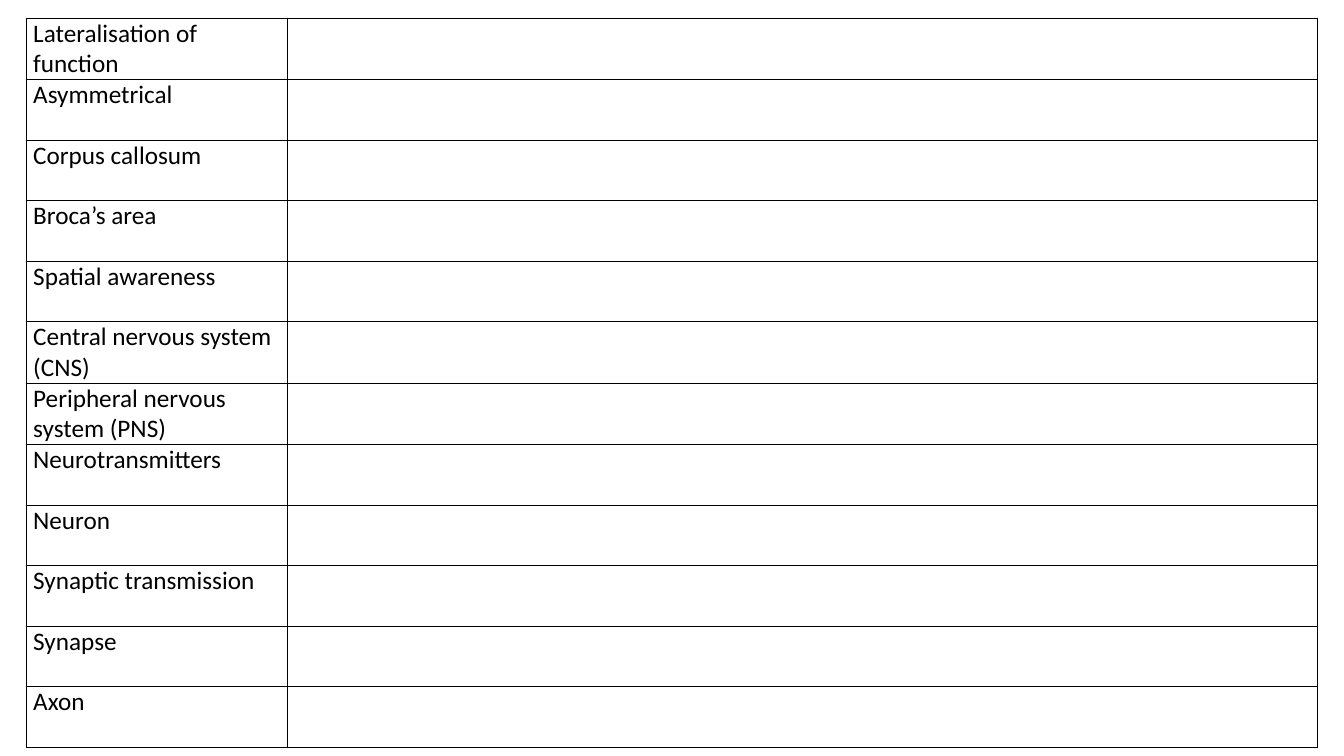
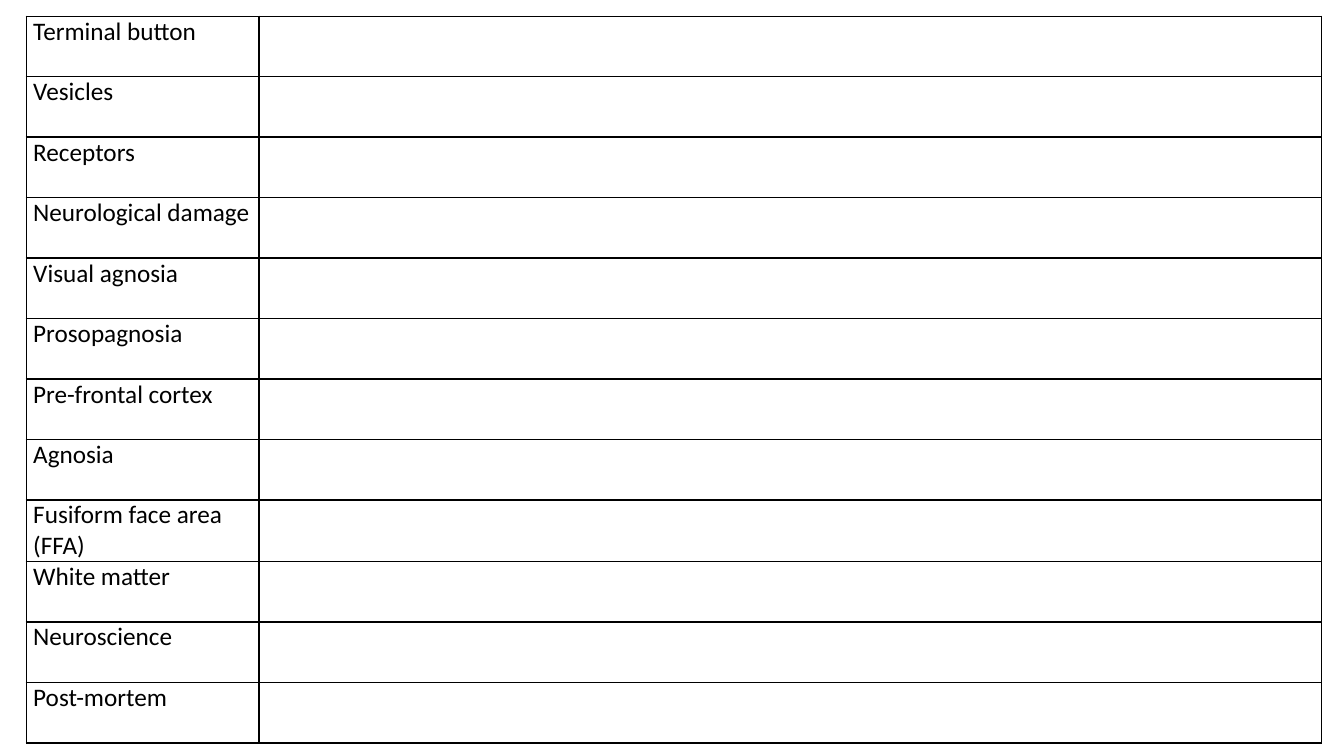
"""Build two glossary slides, each a table of terms with space for definitions."""
from collections import namedtuple

from lxml.etree import SubElement
from pptx import Presentation
from pptx.dml.color import RGBColor
from pptx.oxml.ns import qn
from pptx.util import Inches, Pt

Theme = namedtuple("Theme", "ink font size line pad row")
theme = Theme(ink="000000", font="Calibri", size=18, line=1, pad=0.07, row=0.6)

Sheet = namedtuple("Sheet", "left top widths terms")
sheets = [
    Sheet(0.26, 0.18, (2.59, 10.22), [
        "Lateralisation of function",
        "Asymmetrical",
        "Corpus callosum",
        "Broca’s area",
        "Spatial awareness",
        "Central nervous system (CNS)",
        "Peripheral nervous system (PNS)",
        "Neurotransmitters",
        "Neuron",
        "Synaptic transmission",
        "Synapse",
        "Axon",
    ]),
    Sheet(0.26, 0.16, (2.31, 10.54), [
        "Terminal button",
        "Vesicles",
        "Receptors",
        "Neurological damage",
        "Visual agnosia",
        "Prosopagnosia",
        "Pre-frontal cortex",
        "Agnosia",
        "Fusiform face area (FFA)",
        "White matter",
        "Neuroscience",
        "Post-mortem",
    ]),
]


def write(cell, text, size=theme.size, font=theme.font, color=theme.ink):
    run = cell.text_frame.paragraphs[0].add_run()
    run.text = text
    run.font.size = Pt(size)
    run.font.name = font
    run.font.color.rgb = RGBColor.from_string(color)


def frame(cell):
    props = cell._tc.get_or_add_tcPr()
    for side in ("lnL", "lnR", "lnT", "lnB"):
        edge = SubElement(props, qn(f"a:{side}"), w=str(Pt(theme.line)))
        fill = SubElement(edge, qn("a:solidFill"))
        SubElement(fill, qn("a:srgbClr"), val=theme.ink)
    cell.fill.background()
    cell.margin_left = cell.margin_right = Inches(theme.pad)
    cell.margin_top = cell.margin_bottom = 0


deck = Presentation()
deck.slide_width = Inches(13.33)
deck.slide_height = Inches(7.5)
blank = deck.slide_layouts[6]

for sheet in sheets:
    slide = deck.slides.add_slide(blank)
    count = len(sheet.terms)
    table = slide.shapes.add_table(
        count, len(sheet.widths), Inches(sheet.left), Inches(sheet.top),
        Inches(sum(sheet.widths)), Inches(theme.row * count)).table
    table.first_row = table.horz_banding = False
    for column, width in zip(table.columns, sheet.widths):
        column.width = Inches(width)
    for row, term in zip(table.rows, sheet.terms):
        row.height = Inches(theme.row)
        for cell in row.cells:
            frame(cell)
        write(row.cells[0], term)

deck.save("out.pptx")
